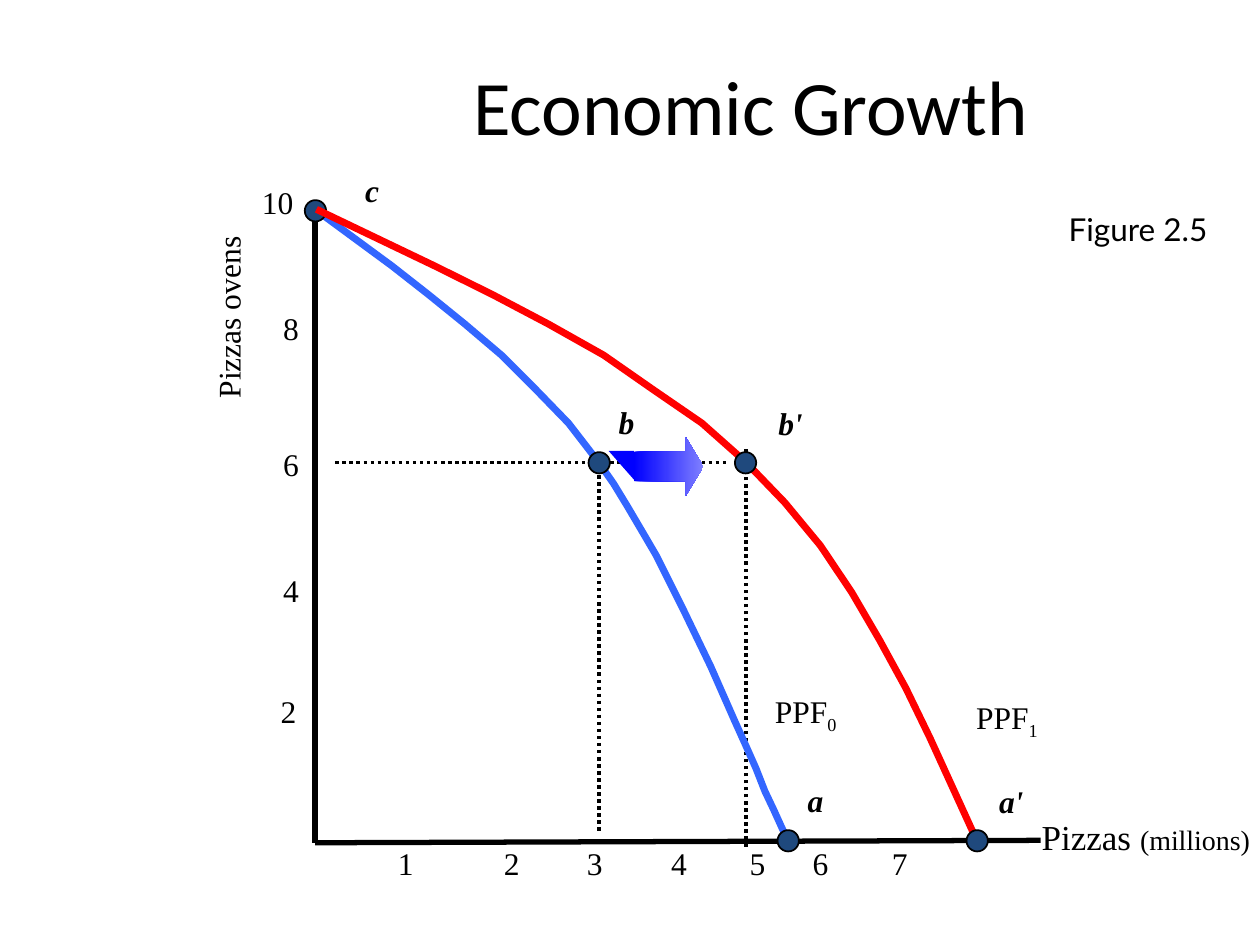
import pptx
import pptx.dml.color
import pptx.enum.dml
import pptx.enum.shapes
import pptx.enum.text
import pptx.util
from lxml import etree
from pptx.oxml.ns import qn
from pptx.util import Cm

SHAPE = pptx.enum.shapes.MSO_SHAPE
ALIGN = pptx.enum.text.PP_ALIGN
BLACK, BLUE, RED, NAVY = "000000", "3366FF", "FF0000", "1F497D"


def colour(hex_code):
    return pptx.dml.color.RGBColor.from_string(hex_code)


class Figure:
    """Holds the style and the slide being drawn; all lengths are in cm."""

    serif = "Times New Roman"
    size = 18
    dot_size = 0.43

    def __init__(self, slide):
        self.shapes = slide.shapes

    def line(self, x1, y1, x2, y2, width=3, dotted=False):
        line = self.shapes.add_connector(
            pptx.enum.shapes.MSO_CONNECTOR.STRAIGHT, Cm(x1), Cm(y1), Cm(x2), Cm(y2))
        line.line.color.rgb = colour(BLACK)
        line.line.width = pptx.util.Pt(width)
        if dotted:
            line.line.dash_style = pptx.enum.dml.MSO_LINE.ROUND_DOT
        etree.SubElement(line._element.spPr, qn("a:effectLst"))

    def curve(self, points, hex_code):
        start, *rest = [(Cm(x), Cm(y)) for x, y in points]
        builder = self.shapes.build_freeform(*start)
        builder.add_line_segments(rest, close=False)
        curve = builder.convert_to_shape()
        curve.shadow.inherit = False
        curve.fill.background()
        curve.line.color.rgb = colour(hex_code)
        curve.line.width = pptx.util.Pt(4)

    def shape(self, kind, x, y, width, height, fill, outline=None):
        shape = self.shapes.add_shape(kind, Cm(x), Cm(y), Cm(width), Cm(height))
        shape.shadow.inherit = False
        shape.fill.solid()
        shape.fill.fore_color.rgb = colour(fill)
        if outline:
            shape.line.color.rgb = colour(outline)
            shape.line.width = pptx.util.Pt(1)
        else:
            shape.line.fill.background()
        return shape

    def dot(self, x, y):
        d = self.dot_size
        self.shape(SHAPE.OVAL, x - d / 2, y - d / 2, d, d, NAVY, BLACK)

    def text(self, words, x, y, width, height=1.27, size=None, font=None,
             align=ALIGN.LEFT, wrap=False, emphasis=False):
        box = self.shapes.add_textbox(Cm(x), Cm(y), Cm(width), Cm(height))
        frame = box.text_frame
        frame.word_wrap = wrap
        if not wrap:
            frame.auto_size = pptx.enum.text.MSO_AUTO_SIZE.SHAPE_TO_FIT_TEXT
        paragraph = frame.paragraphs[0]
        paragraph.text = words
        paragraph.alignment = align
        paragraph.font.name = font or self.serif
        paragraph.font.size = pptx.util.Pt(size or self.size)
        paragraph.font.color.rgb = colour(BLACK)
        if emphasis:
            paragraph.font.bold = paragraph.font.italic = True
        return box

    def curve_name(self, index, x, y):
        box = self.text("PPF", x, y, 2.21)
        subscript = box.text_frame.paragraphs[0].add_run()
        subscript.text = index
        subscript._r.get_or_add_rPr().set("baseline", "-25000")


def main():
    deck = pptx.Presentation()
    deck.slide_width, deck.slide_height = Cm(25.4), Cm(19.05)
    figure = Figure(deck.slides.add_slide(deck.slide_layouts[6]))

    # Guides to b' and the arrow showing growth
    figure.line(15.04, 17.07, 15.04, 9.02, 2, dotted=True)
    figure.line(6.76, 9.32, 14.68, 9.32, 2, dotted=True)
    growth = figure.shape(SHAPE.RIGHT_ARROW, 12.78, 8.81, 1.4, 1.19, "0000FF")
    growth.adjustments[0], growth.adjustments[1] = 0.5, 0.3
    growth.fill.gradient()
    growth.fill.gradient_angle = 0
    for stop, shade in zip(growth.fill.gradient_stops, ("0000FF", "7F7FFF")):
        stop.color.rgb = colour(shade)
    tail = figure.shape(SHAPE.RIGHT_TRIANGLE, 12.27, 9.09, 0.51, 0.58, "0000FF")
    tail.rotation = 180

    # Title
    title = figure.text("Economic Growth", 4.88, 0.53, 20.52, 3.18, 44, "Calibri",
                        ALIGN.CENTER, wrap=True)
    title.text_frame.vertical_anchor = pptx.enum.text.MSO_ANCHOR.MIDDLE

    # Axes and the first frontier
    figure.line(6.35, 4.06, 6.35, 16.99)
    figure.line(6.35, 16.99, 20.98, 16.94)
    figure.curve([
        (6.35, 4.22), (7.9, 5.36), (8.64, 5.94), (9.37, 6.53), (10.11, 7.16),
        (10.8, 7.85), (11.46, 8.53), (12.07, 9.32), (12.37, 9.75), (12.65, 10.21),
        (12.95, 10.72), (13.23, 11.2), (13.79, 12.32), (14.33, 13.44), (14.81, 14.53),
        (15.04, 15.04), (15.24, 15.49), (15.42, 15.95), (15.6, 16.33), (15.75, 16.66),
        (15.88, 16.94)], BLUE)

    # Axis numbers and the oven label
    for pizzas, x in enumerate((7.77, 9.91, 11.58, 13.28, 14.86, 16.13, 17.73), 1):
        figure.text(str(pizzas), x, 16.89, 0.91)
    for ovens, x, y, width in ((2, 5.41, 13.82, 0.91), (4, 5.46, 11.38, 0.91),
                               (6, 5.46, 8.84, 0.91), (8, 5.46, 6.1, 0.91),
                               (10, 5.03, 3.56, 1.35)):
        figure.text(str(ovens), x, y, width)
    oven_axis = figure.text("Pizzas ovens", 2.4, 5.57, 4.4, 1.02, wrap=True)
    oven_axis.rotation = 270

    # Points on the first frontier
    for x, y in ((12.08, 9.33), (15.89, 16.95), (6.36, 4.25)):
        figure.dot(x, y)
    figure.line(12.07, 9.58, 12.07, 16.76, 2, dotted=True)
    figure.curve_name("0", 15.37, 13.82)

    # Second frontier and its points
    figure.curve([
        (6.38, 4.22), (8.76, 5.36), (9.93, 5.94), (11.05, 6.53), (12.17, 7.16),
        (13.16, 7.85), (14.15, 8.53), (15.04, 9.32), (15.82, 10.13), (16.54, 11),
        (17.17, 11.94), (17.73, 12.9), (18.26, 13.87), (18.75, 14.88),
        (19.69, 16.94)], RED)
    for x, y in ((15.03, 9.33), (19.7, 16.95)):
        figure.dot(x, y)
    figure.curve_name("1", 19.43, 13.94)

    # Point names
    for name, x, y, width in (("b", 12.22, 8, 0.91), ("a", 16.03, 15.62, 0.91),
                              ("c", 7.11, 3.33, 0.89), ("b'", 15.44, 8.03, 1.17),
                              ("a'", 19.89, 15.65, 1.17)):
        figure.text(name, x, y, width, emphasis=True)

    # Pizza axis label and figure number
    pizza_axis = figure.text("Pizzas ", 20.75, 16.31, 4.72, 1.09, 20)
    unit = pizza_axis.text_frame.paragraphs[0].add_run()
    unit.text = "(millions)"
    unit.font.size = pptx.util.Pt(16)
    figure.text("Figure 2.5", 18.49, 4.11, 6.1, 1.02, font="Lato",
                align=ALIGN.RIGHT, wrap=True)

    deck.save("out.pptx")


if __name__ == "__main__":
    main()
